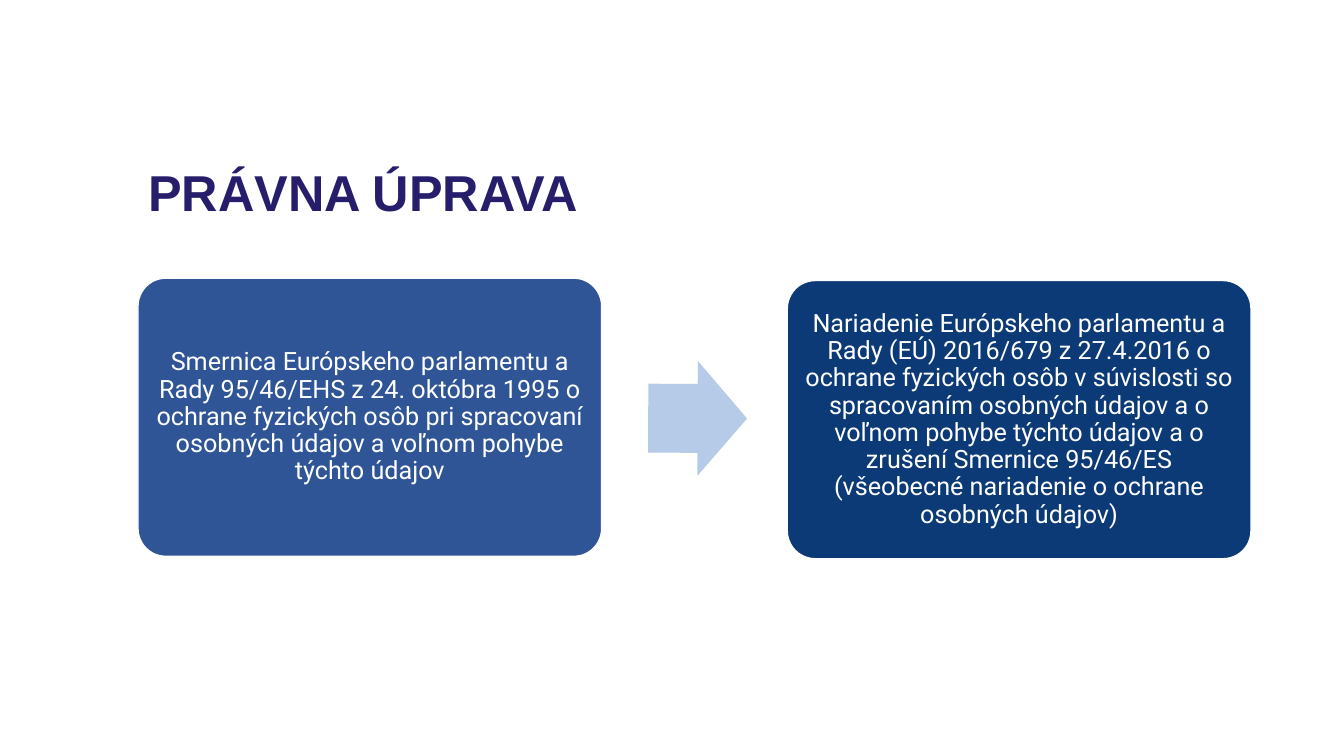
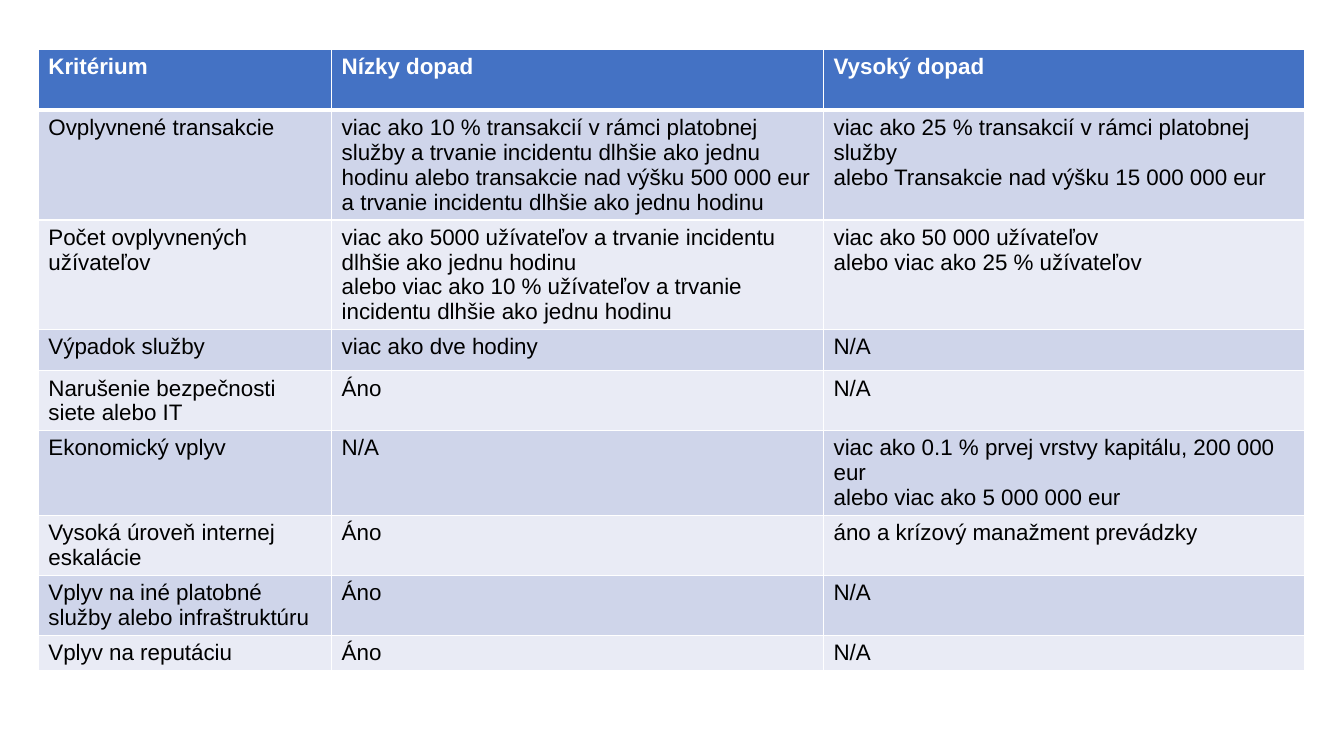
from dataclasses import dataclass

from lxml.etree import SubElement
from pptx import Presentation
from pptx.dml.color import RGBColor
from pptx.enum.shapes import MSO_SHAPE as Shape
from pptx.enum.text import MSO_ANCHOR as Anchor, PP_ALIGN as Align
from pptx.oxml.ns import qn
from pptx.util import Pt

# Shared colours and fonts
WHITE = RGBColor(0xFF, 0xFF, 0xFF)
BLACK = RGBColor(0x00, 0x00, 0x00)
TITLE_INK = RGBColor(0x26, 0x1E, 0x6A)
OLD_LAW = RGBColor(0x2F, 0x55, 0x97)
NEW_LAW = RGBColor(0x0C, 0x3A, 0x76)
ARROW = RGBColor(0xB5, 0xCB, 0xE7)
HEADER = RGBColor(0x44, 0x72, 0xC4)
BANDS = (RGBColor(0xE9, 0xEB, 0xF5), RGBColor(0xCF, 0xD5, 0xEA))
MAIN_FONT = "Arial"
BOX_FONT = "Roboto"

TITLE_ONLY, BLANK = 5, 6


@dataclass(frozen=True)
class LawBox:
    left: float
    top: float
    fill: RGBColor
    text: str


@dataclass(frozen=True)
class Criterion:
    height: float
    name: str
    low: str
    high: str


BOX_WIDTH, BOX_HEIGHT = 331.2, 198.7
LAW_BOXES = (
    LawBox(98.6, 198.7, OLD_LAW,
           "Smernica Európskeho parlamentu a Rady 95/46/EHS z 24. októbra 1995 "
           "o ochrane fyzických osôb pri spracovaní osobných údajov "
           "a voľnom pohybe týchto údajov"),
    LawBox(562.4, 200.4, NEW_LAW,
           "Nariadenie Európskeho parlamentu a Rady (EÚ) 2016/679 z 27.4.2016 "
           "o ochrane fyzických osôb v súvislosti so spracovaním osobných údajov "
           "a o voľnom pohybe týchto údajov a o zrušení Smernice 95/46/ES "
           "(všeobecné nariadenie o ochrane osobných údajov)"),
)

# The first row is the header; a line break starts a new paragraph
COLUMN_WIDTHS = (209.5, 351.4, 343.5)
CRITERIA = (
    Criterion(43.5, "Kritérium", "Nízky dopad", "Vysoký dopad"),
    Criterion(78, "Ovplyvnené transakcie",
              "viac ako 10 % transakcií v rámci platobnej služby a trvanie incidentu "
              "dlhšie ako jednu hodinu alebo transakcie nad výšku 500 000 eur "
              "a trvanie incidentu dlhšie ako jednu hodinu",
              "viac ako 25 % transakcií v rámci platobnej služby\n"
              "alebo Transakcie nad výšku 15 000 000 eur"),
    Criterion(78, "Počet ovplyvnených užívateľov",
              "viac ako 5000 užívateľov a trvanie incidentu dlhšie ako jednu hodinu\n"
              "alebo viac ako 10 % užívateľov a trvanie incidentu "
              "dlhšie ako jednu hodinu",
              "viac ako 50 000 užívateľov\nalebo viac ako 25 % užívateľov"),
    Criterion(29.5, "Výpadok služby", "viac ako dve hodiny", "N/A"),
    Criterion(42, "Narušenie bezpečnosti siete alebo IT", "Áno", "N/A"),
    Criterion(60, "Ekonomický vplyv", "N/A",
              "viac ako 0.1 % prvej vrstvy kapitálu, 200 000 eur\n"
              "alebo viac ako 5 000 000 eur"),
    Criterion(42, "Vysoká úroveň internej eskalácie", "Áno",
              "áno a krízový manažment prevádzky"),
    Criterion(42, "Vplyv na iné platobné služby alebo infraštruktúru", "Áno", "N/A"),
    Criterion(24.5, "Vplyv na reputáciu", "Áno", "N/A"),
)


def style_paragraph(paragraph, font: str, size: float, color: RGBColor,
                    bold: bool = False) -> None:
    paragraph.font.name = font
    paragraph.font.size = Pt(size)
    paragraph.font.color.rgb = color
    paragraph.font.bold = bold


def set_title(slide, text: str) -> None:
    title = slide.shapes.title
    title.left, title.top = Pt(98.6), Pt(118.1)
    title.width, title.height = Pt(795.6), Pt(43.2)
    frame = title.text_frame
    frame.text = text
    frame.vertical_anchor = Anchor.MIDDLE
    paragraph = frame.paragraphs[0]
    paragraph.alignment = Align.LEFT
    paragraph.line_spacing = 0.9
    style_paragraph(paragraph, MAIN_FONT, 36, TITLE_INK, bold=True)


def add_filled_shape(slide, kind: Shape, left: float, top: float, width: float,
                     height: float, fill: RGBColor):
    shape = slide.shapes.add_shape(kind, Pt(left), Pt(top), Pt(width), Pt(height))
    shape.shadow.inherit = False
    shape.fill.solid()
    shape.fill.fore_color.rgb = fill
    shape.line.fill.background()
    return shape


def add_law_box(slide, box: LawBox) -> None:
    shape = add_filled_shape(slide, Shape.ROUNDED_RECTANGLE, box.left, box.top,
                             BOX_WIDTH, BOX_HEIGHT, box.fill)
    shape.adjustments[0] = 0.1
    shape.line.color.rgb = WHITE
    shape.line.width = Pt(1)
    frame = shape.text_frame
    frame.word_wrap = True
    frame.vertical_anchor = Anchor.MIDDLE
    frame.margin_left = frame.margin_right = Pt(5)
    frame.margin_top = frame.margin_bottom = Pt(5)
    frame.text = box.text
    paragraph = frame.paragraphs[0]
    paragraph.alignment = Align.CENTER
    paragraph.line_spacing = 0.9
    style_paragraph(paragraph, BOX_FONT, 18, WHITE)


def add_cell_borders(cell, bottom_width: float) -> None:
    properties = cell._tc.get_or_add_tcPr()
    widths = {"a:lnL": 1, "a:lnR": 1, "a:lnT": 1, "a:lnB": bottom_width}
    for index, (tag, width) in enumerate(widths.items()):
        line = SubElement(properties, qn(tag), w=str(Pt(width)))
        fill = SubElement(line, qn("a:solidFill"))
        SubElement(fill, qn("a:srgbClr"), val=str(WHITE))
        properties.insert(index, line)  # borders come before the fill


def fill_cell(cell, text: str, row_index: int) -> None:
    is_header = row_index == 0
    cell.fill.solid()
    cell.fill.fore_color.rgb = HEADER if is_header else BANDS[row_index % 2]
    add_cell_borders(cell, 3 if is_header else 1)
    cell.text = text
    for paragraph in cell.text_frame.paragraphs:
        style_paragraph(paragraph, MAIN_FONT, 16,
                        WHITE if is_header else BLACK, is_header)


def build_law_slide(presentation) -> None:
    slide = presentation.slides.add_slide(presentation.slide_layouts[TITLE_ONLY])
    set_title(slide, "PRÁVNA ÚPRAVA")
    for box in LAW_BOXES:
        add_law_box(slide, box)
    arrow = add_filled_shape(slide, Shape.RIGHT_ARROW, 463, 257.8, 70.6, 82.1, ARROW)
    arrow.adjustments[0], arrow.adjustments[1] = 0.6, 0.5
    arrow.rotation = 0.2


def build_criteria_slide(presentation) -> None:
    slide = presentation.slides.add_slide(presentation.slide_layouts[BLANK])
    table = slide.shapes.add_table(
        len(CRITERIA), len(COLUMN_WIDTHS), Pt(27.4), Pt(35.3),
        Pt(sum(COLUMN_WIDTHS)), Pt(sum(row.height for row in CRITERIA))).table
    for column, width in zip(table.columns, COLUMN_WIDTHS):
        column.width = Pt(width)
    for row_index, criterion in enumerate(CRITERIA):
        table.rows[row_index].height = Pt(criterion.height)
        texts = (criterion.name, criterion.low, criterion.high)
        for column_index, text in enumerate(texts):
            fill_cell(table.cell(row_index, column_index), text, row_index)


def main() -> None:
    presentation = Presentation()
    presentation.slide_width, presentation.slide_height = Pt(960), Pt(540)
    build_law_slide(presentation)
    build_criteria_slide(presentation)
    presentation.save("out.pptx")


if __name__ == "__main__":
    main()
